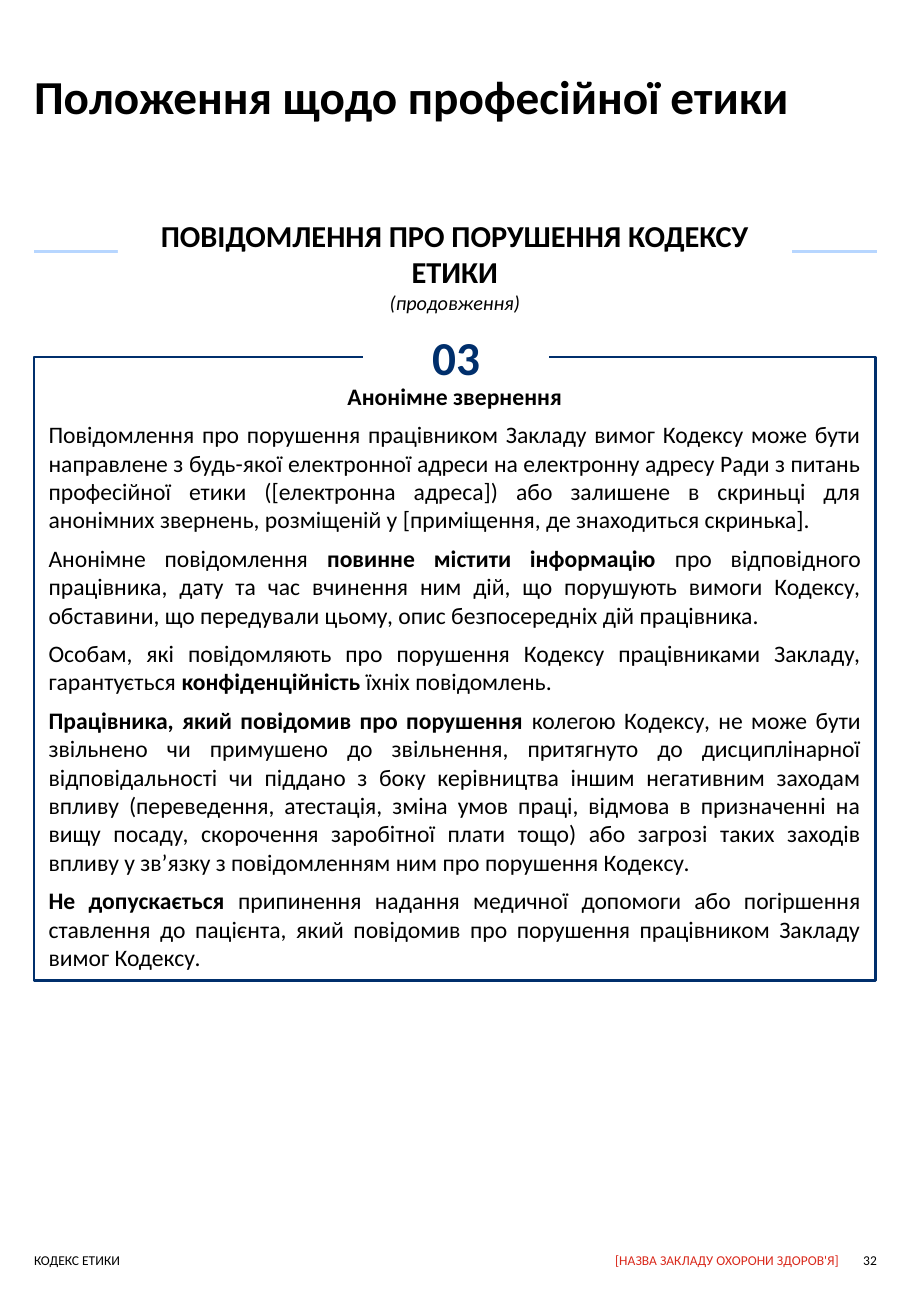
from dataclasses import dataclass

from lxml.etree import SubElement
from pptx import Presentation
from pptx.dml.color import RGBColor
from pptx.enum.shapes import MSO_CONNECTOR, MSO_SHAPE
from pptx.enum.text import MSO_ANCHOR, MSO_AUTO_SIZE, PP_ALIGN
from pptx.oxml.ns import qn
from pptx.util import Emu, Pt

EMU_PER_PX = 9144


@dataclass(frozen=True)
class Theme:
    """Colours, font and type sizes of the document."""
    font: str = "Calibri"
    text: RGBColor = RGBColor(0x00, 0x00, 0x00)
    paper: RGBColor = RGBColor(0xFF, 0xFF, 0xFF)
    navy: RGBColor = RGBColor(0x00, 0x2F, 0x6C)
    pale_blue: RGBColor = RGBColor(0xB7, 0xD6, 0xFF)
    red: RGBColor = RGBColor(0xDA, 0x29, 0x1C)
    title: int = 28
    heading: int = 18
    body: int = 14
    note: int = 12
    footer: int = 8


THEME = Theme()

RULES = [
    "Повідомлення про порушення працівником Закладу вимог Кодексу може бути направлене "
    "з будь-якої електронної адреси на електронну адресу Ради з питань професійної етики "
    "([електронна адреса]) або залишене в скриньці для анонімних звернень, розміщеній "
    "у [приміщення, де знаходиться скринька].",
    "Анонімне повідомлення **повинне містити інформацію **про відповідного працівника, "
    "дату та час вчинення ним дій, що порушують вимоги Кодексу, обставини, що передували "
    "цьому, опис безпосередніх дій працівника.",
    "Особам, які повідомляють про порушення Кодексу працівниками Закладу, гарантується "
    "**конфіденційність** їхніх повідомлень.",
    "**Працівника, який повідомив про порушення **колегою Кодексу, не може бути звільнено "
    "чи примушено до звільнення, притягнуто до дисциплінарної відповідальності чи піддано "
    "з боку керівництва іншим негативним заходам впливу (переведення, атестація, зміна умов "
    "праці, відмова в призначенні на вищу посаду, скорочення заробітної плати тощо) або "
    "загрозі таких заходів впливу у зв’язку з повідомленням ним про порушення Кодексу.",
    "**Не допускається **припинення надання медичної допомоги або погіршення ставлення "
    "до пацієнта, який повідомив про порушення працівником Закладу вимог Кодексу.",
]

FOOTERS = [
    ("[НАЗВА ЗАКЛАДУ ОХОРОНИ ЗДОРОВ'Я]", (390, 1030, 301, 13), THEME.red, PP_ALIGN.RIGHT),
    ("32", (703, 1030, 19, 13), THEME.text, PP_ALIGN.RIGHT),
    ("КОДЕКС ЕТИКИ", (28, 1030, 395, 16), THEME.text, PP_ALIGN.LEFT),
]


def px(length):
    """Turn a length in px into EMU."""
    return Emu(length * EMU_PER_PX)


def write(frame, text, *, size, color=THEME.text, bold=False, italic=False,
          align=PP_ALIGN.LEFT, after=0):
    """Add a paragraph to the frame, switching bold at each double asterisk."""
    paragraph = frame.paragraphs[0]
    if paragraph.runs:
        paragraph = frame.add_paragraph()
    paragraph.alignment = align
    paragraph.space_after = Pt(after)
    for index, part in enumerate(text.split("**")):
        if part:
            run = paragraph.add_run()
            run.text = part
            font = run.font
            font.name = THEME.font
            font.size = Pt(size)
            font.color.rgb = color
            font.bold = bold != (index % 2 == 1)
            font.italic = italic


def prepare_frame(shape, insets=(0, 0, 0, 0), anchor=MSO_ANCHOR.TOP):
    """Set wrapping, insets and anchor, and return the text frame."""
    frame = shape.text_frame
    frame.word_wrap = True
    frame.auto_size = MSO_AUTO_SIZE.NONE
    frame.vertical_anchor = anchor
    (frame.margin_left, frame.margin_top,
     frame.margin_right, frame.margin_bottom) = map(px, insets)
    return frame


def add_title(slide, text, box):
    """Fill and move the title placeholder."""
    title = slide.shapes.title
    title.left, title.top, title.width, title.height = map(px, box)
    write(prepare_frame(title), text, size=THEME.title, bold=True)


def add_label(slide, text, box, color, align):
    """Add a footer label."""
    label = slide.shapes.add_textbox(*map(px, box))
    write(prepare_frame(label), text, size=THEME.footer, color=color, align=align)


def add_rule(slide, left, right, y):
    """Add a horizontal pale blue line."""
    rule = slide.shapes.add_connector(
        MSO_CONNECTOR.STRAIGHT, px(left), px(y), px(right), px(y))
    rule.line.color.rgb = THEME.pale_blue
    rule.line.width = Pt(2.25)
    SubElement(rule.element.spPr, qn("a:effectLst"))


def add_panel(slide, box, fill=None, line=None, **frame_format):
    """Add a rectangle and return its text frame."""
    panel = slide.shapes.add_shape(MSO_SHAPE.RECTANGLE, *map(px, box))
    panel.shadow.inherit = False
    if fill is None:
        panel.fill.background()
    else:
        panel.fill.solid()
        panel.fill.fore_color.rgb = fill
    if line is None:
        panel.line.fill.background()
    else:
        panel.line.color.rgb = line
        panel.line.width = Pt(1.5)
    return prepare_frame(panel, **frame_format)


def main():
    """Build the page and save it."""
    presentation = Presentation()
    presentation.slide_width, presentation.slide_height = px(750), px(1083)
    slide = presentation.slides.add_slide(presentation.slide_layouts[5])

    for footer in FOOTERS:
        add_label(slide, *footer)
    add_title(slide, "Положення щодо професійної етики", (28, 55, 694, 53))

    add_rule(slide, 28, 722, 207)
    heading = add_panel(slide, (97, 185, 555, 67), fill=THEME.paper,
                        anchor=MSO_ANCHOR.MIDDLE)
    write(heading, "ПОВІДОМЛЕННЯ ПРО ПОРУШЕННЯ КОДЕКСУ ЕТИКИ",
          size=THEME.heading, bold=True, align=PP_ALIGN.CENTER)
    write(heading, "(продовження)", size=THEME.note, italic=True, align=PP_ALIGN.CENTER)

    section = add_panel(slide, (28, 294, 693, 513), line=THEME.navy,
                        insets=(12, 20, 12, 8))
    write(section, "Анонімне звернення", size=THEME.body, bold=True,
          align=PP_ALIGN.CENTER, after=6)
    for rule in RULES:
        write(section, rule, size=THEME.body, align=PP_ALIGN.JUSTIFY, after=6)

    number = add_panel(slide, (299, 270, 153, 47), fill=THEME.paper)
    write(number, "03", size=THEME.title, color=THEME.navy, bold=True,
          align=PP_ALIGN.CENTER)

    presentation.save("out.pptx")


if __name__ == "__main__":
    main()
